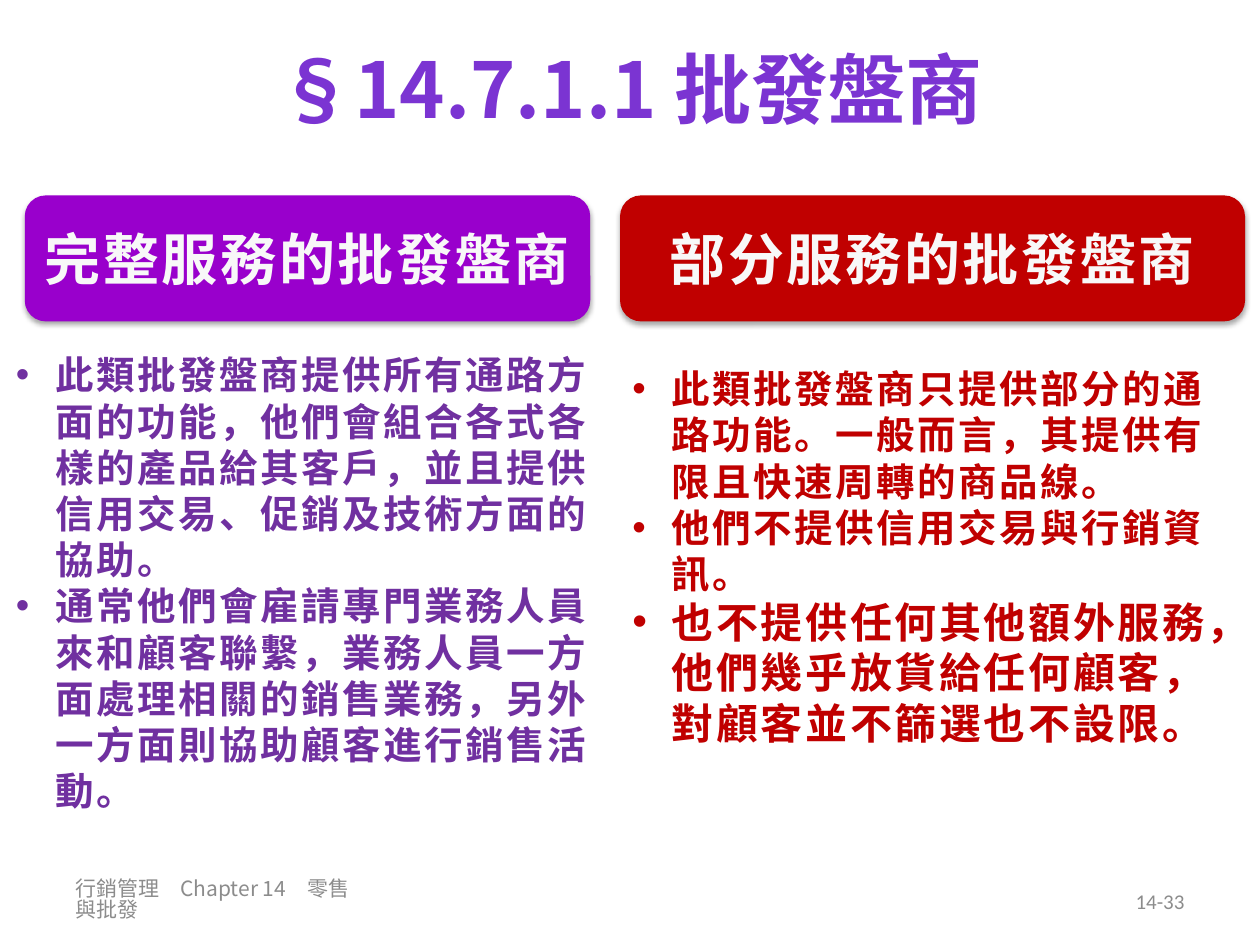
from dataclasses import dataclass

from lxml import etree
from pptx import Presentation
from pptx.dml.color import RGBColor
from pptx.enum.shapes import MSO_SHAPE
from pptx.enum.text import MSO_ANCHOR, PP_ALIGN
from pptx.oxml.ns import qn
from pptx.util import Cm, Pt

ROUNDED = MSO_SHAPE.ROUNDED_RECTANGLE
MIDDLE = MSO_ANCHOR.MIDDLE
LEFT, CENTER, RIGHT = PP_ALIGN.LEFT, PP_ALIGN.CENTER, PP_ALIGN.RIGHT


@dataclass(frozen=True)
class Theme:
    """Colours, fonts and type sizes of the slide."""
    title: str = "7B34D2"
    footer: str = "8C8C8C"
    heading: str = "F8F8F8"
    full_fill: str = "9900CC"
    full_text: str = "7030A0"
    limited: str = "C00000"
    cjk: str = "Noto Sans CJK SC"
    latin: str = "Calibri"
    title_size: int = 44
    heading_size: int = 32
    body_size: int = 22
    large_size: int = 24
    footer_size: int = 12
    spacing: int = 150


THEME = Theme()

FULL_POINTS = [
    ("此類批發盤商提供所有通路方面的功能，他們會組合各式各樣的產品給其客戶，並且提供信用交易、促銷及技術方面的協助。", THEME.body_size),
    ("通常他們會雇請專門業務人員來和顧客聯繫，業務人員一方面處理相關的銷售業務，另外一方面則協助顧客進行銷售活動。", THEME.body_size),
]
LIMITED_POINTS = [
    ("此類批發盤商只提供部分的通路功能。一般而言，其提供有限且快速周轉的商品線。", THEME.body_size),
    ("他們不提供信用交易與行銷資訊。", THEME.body_size),
    ("也不提供任何其他額外服務，他們幾乎放貨給任何顧客，對顧客並不篩選也不設限。", THEME.large_size),
]


def add_run(p, text, size, color, font, bold=False, spacing=0):
    """Add one styled run to a paragraph."""
    r = p.add_run()
    r.text = text
    r.font.size = Pt(size)
    r.font.bold = bold
    r.font.color.rgb = RGBColor.from_string(color)
    r.font.name = font
    props = r.font._element
    if spacing:
        props.set("spc", str(spacing))
    east_asian = etree.Element(qn("a:ea"), typeface=font)
    props.find(qn("a:latin")).addnext(east_asian)


def add_line(s, box, text, size, color, font, align, bold=False, leading=1.0):
    """Place a vertically centred single-paragraph text box."""
    tf = s.shapes.add_textbox(*map(Cm, box)).text_frame
    tf.word_wrap = True
    tf.vertical_anchor = MIDDLE
    p = tf.paragraphs[0]
    p.alignment = align
    p.line_spacing = leading
    add_run(p, text, size, color, font, bold)


def add_shadow(sp):
    """Give a shape a soft shadow straight below it."""
    sp.shadow.inherit = False
    effects = sp._element.spPr.find(qn("a:effectLst"))
    shadow = etree.SubElement(effects, qn("a:outerShdw"), blurRad=str(Pt(3.1)),
                              dist=str(Pt(1.8)), dir="5400000", rotWithShape="0")
    color = etree.SubElement(shadow, qn("a:srgbClr"), val="000000")
    etree.SubElement(color, qn("a:alpha"), val="35000")


def add_heading(s, box, text, fill):
    """Place a rounded column heading."""
    sp = s.shapes.add_shape(ROUNDED, *map(Cm, box))
    sp.fill.solid()
    sp.fill.fore_color.rgb = RGBColor.from_string(fill)
    sp.line.fill.background()
    add_shadow(sp)
    tf = sp.text_frame
    tf.word_wrap = False
    tf.vertical_anchor = MIDDLE
    p = tf.paragraphs[0]
    p.alignment = CENTER
    add_run(p, text, THEME.heading_size, THEME.heading, THEME.cjk, True, THEME.spacing)


def add_bullets(s, box, points, color):
    """Place a bulleted list of (text, size) points."""
    tf = s.shapes.add_textbox(*map(Cm, box)).text_frame
    tf.word_wrap = True
    for i, (text, size) in enumerate(points):
        p = tf.add_paragraph() if i else tf.paragraphs[0]
        props = p._p.get_or_add_pPr()
        props.set("marL", str(Cm(0.79)))
        props.set("indent", str(-Cm(0.79)))
        etree.SubElement(props, qn("a:buFont"), typeface="Arial")
        etree.SubElement(props, qn("a:buChar"), char="•")
        add_run(p, text, size, color, THEME.latin, True, THEME.spacing)


def add_column(s, box, heading, fill, body_box, points, color):
    """Place a heading and its list, both relative to the column box."""
    left, top, width = box
    dx, dy, body_width, body_height = body_box
    add_heading(s, (left, top, width, 2.54), heading, fill)
    add_bullets(s, (left + dx, top + dy, body_width, body_height), points, color)


def add_footer(s, box):
    """Place the chapter name and page number at the ends of the box."""
    left, top, width, height = box
    add_line(s, (left, top, 6.22, height), "行銷管理　Chapter 14　零售與批發",
             THEME.footer_size, THEME.footer, THEME.cjk, LEFT, leading=0.83)
    add_line(s, (left + width - 5.92, top, 5.92, height), "14-33",
             THEME.footer_size, THEME.footer, THEME.latin, RIGHT)


def main():
    """Build the slide and save it."""
    prs = Presentation()
    prs.slide_width, prs.slide_height = Cm(25.4), Cm(19.05)
    s = prs.slides.add_slide(prs.slide_layouts[6])
    add_line(s, (1.27, 0, 22.86, 3.53), "§14.7.1.1 批發盤商",
             THEME.title_size, THEME.title, THEME.cjk, CENTER, bold=True)
    add_column(s, (0.5, 3.94, 11.4), "完整服務的批發盤商", THEME.full_fill,
               (-0.43, 3.02, 12.14, 9.65), FULL_POINTS, THEME.full_text)
    add_column(s, (12.5, 3.94, 12.6), "部分服務的批發盤商", THEME.limited,
               (0, 3.3, 12.7, 8.03), LIMITED_POINTS, THEME.limited)
    add_footer(s, (1.27, 17.65, 22.86, 1.02))
    prs.save("out.pptx")


if __name__ == "__main__":
    main()
